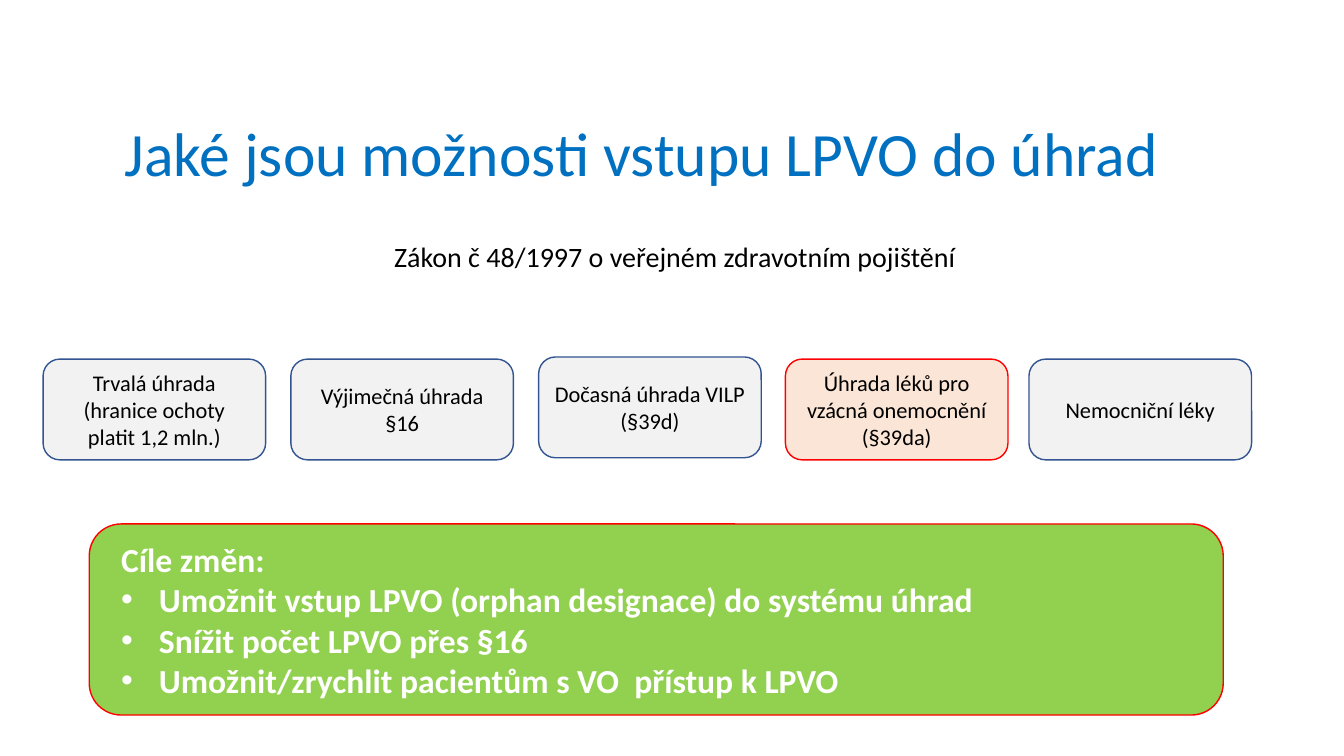
from pptx import Presentation
from pptx.dml.color import RGBColor
from pptx.enum.shapes import MSO_SHAPE as Shape
from pptx.enum.text import MSO_ANCHOR as Anchor, PP_ALIGN as Align
from pptx.oxml.ns import qn
from pptx.util import Pt
from lxml.etree import SubElement

PX = 9525  # EMU per px, 96 px to the inch
THEME = {
    "font": "Calibri",
    "title": {"size": 44, "color": "0070C0"},
    "law": {"size": 20, "color": "000000"},
    "route": {"size": 16, "color": "000000"},
    "goals": {"size": 24, "color": "FFFFFF", "bold": True},
    "plain": ("F2F2F2", "325491"),
    "highlight": ("FBE5D6", "FF0000"),
    "goals_box": ("92D050", "FF0000"),
}


def write(frame, lines, style, **paragraph_format):
    frame.word_wrap = True
    frame.text = "\n".join(lines)
    for paragraph in frame.paragraphs:
        for name, value in paragraph_format.items():
            setattr(paragraph, name, value)
        font = paragraph.runs[0].font
        font.name = THEME["font"]
        font.size = Pt(style["size"])
        font.bold = style.get("bold", False)
        font.color.rgb = RGBColor.from_string(style["color"])


def add_rounded_box(box, colors):
    shape = slide.shapes.add_shape(Shape.ROUNDED_RECTANGLE, *(n * PX for n in box))
    fill, line = colors
    shape.shadow.inherit = False
    shape.fill.solid()
    shape.fill.fore_color.rgb = RGBColor.from_string(fill)
    shape.line.color.rgb = RGBColor.from_string(line)
    shape.line.width = Pt(1)
    shape.text_frame.vertical_anchor = Anchor.MIDDLE
    return shape.text_frame


deck = Presentation()
deck.slide_width, deck.slide_height = 1280 * PX, 720 * PX
slide = deck.slides.add_slide(deck.slide_layouts[5])

title = slide.shapes.title
title.left, title.top, title.width, title.height = (n * PX for n in (109, 80, 1146, 139))
title.text_frame.vertical_anchor = Anchor.MIDDLE
write(title.text_frame, ["Jaké jsou možnosti vstupu LPVO do úhrad"], THEME["title"],
      alignment=Align.LEFT, line_spacing=0.9)

law = slide.shapes.add_textbox(*(n * PX for n in (354, 227, 1022, 69))).text_frame
write(law, ["Zákon č 48/1997 o veřejném zdravotním pojištění"], THEME["law"],
      line_spacing=0.9, space_before=Pt(10))
law.paragraphs[0]._p.get_or_add_pPr().set("marL", str(12 * PX))

routes = [
    (41, 342, "plain", ["Trvalá úhrada", "(hranice ochoty platit 1,2 mln.)"]),
    (277, 342, "plain", ["Výjimečná úhrada §16"]),
    (513, 340, "plain", ["Dočasná úhrada VILP", "(§39d)"]),
    (748, 342, "highlight", ["Úhrada léků pro vzácná onemocnění", "(§39da)"]),
    (980, 342, "plain", ["Nemocniční léky"]),
]
for left, top, colors, lines in routes:
    route = add_rounded_box((left, top, 212, 96), THEME[colors])
    write(route, lines, THEME["route"], alignment=Align.CENTER)

goals = add_rounded_box((85, 499, 1080, 182), THEME["goals_box"])
write(goals, [
    "Cíle změn:",
    "Umožnit vstup LPVO (orphan designace) do systému úhrad",
    "Snížit počet LPVO přes §16",
    "Umožnit/zrychlit pacientům s VO  přístup k LPVO",
], THEME["goals"], alignment=Align.LEFT)
heading, *bullets = goals.paragraphs
heading._p.get_or_add_pPr().set("marL", str(12 * PX))
for bullet in bullets:
    properties = bullet._p.get_or_add_pPr()
    properties.set("marL", str(48 * PX))
    properties.set("indent", str(-36 * PX))
    SubElement(properties, qn("a:buFont"), typeface="Arial")
    SubElement(properties, qn("a:buChar"), char="•")

deck.save("out.pptx")
